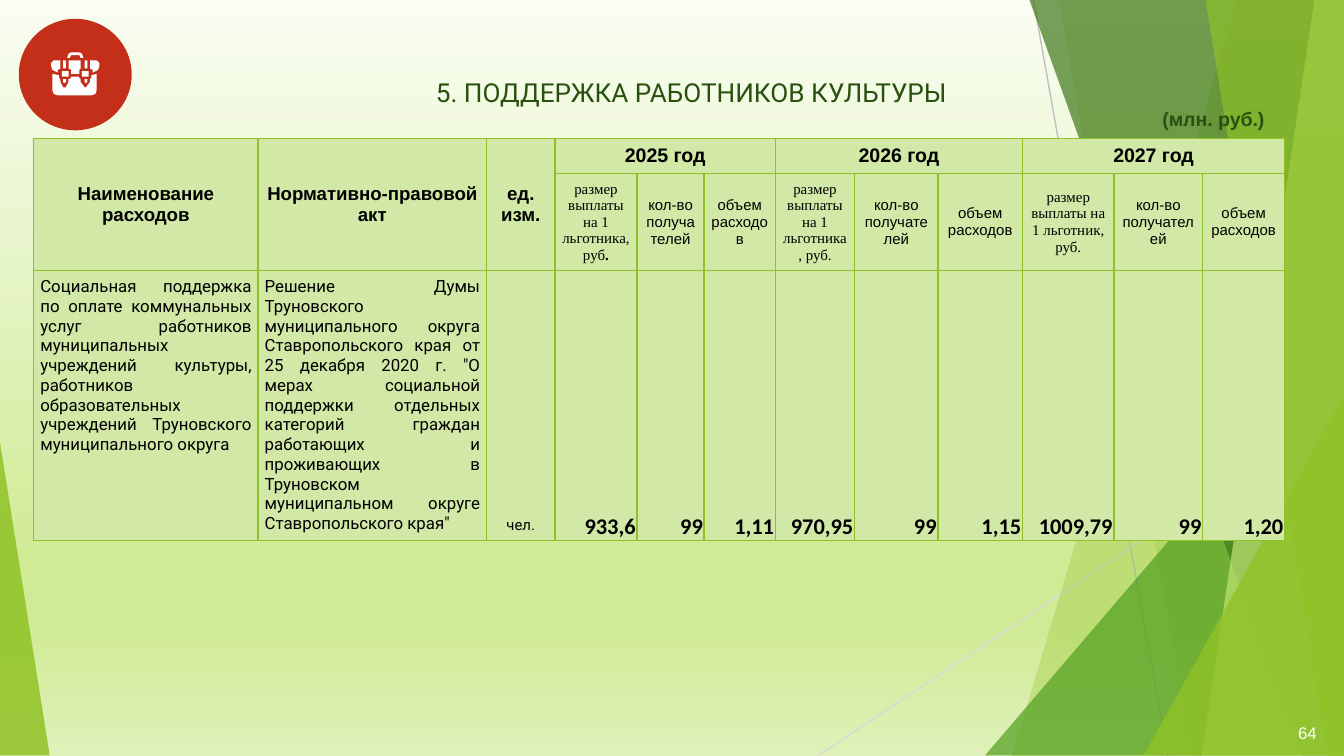
"""Build the slide on support for culture workers."""
from lxml import etree
from pptx import Presentation
from pptx.dml.color import RGBColor
from pptx.enum.shapes import MSO_CONNECTOR, MSO_SHAPE
from pptx.enum.text import MSO_ANCHOR, PP_ALIGN
from pptx.oxml.ns import qn
from pptx.util import Inches, Pt

LINE = MSO_CONNECTOR.STRAIGHT
OVAL, WEDGE = MSO_SHAPE.OVAL, MSO_SHAPE.ISOSCELES_TRIANGLE
TOP, MID, LOW = MSO_ANCHOR.TOP, MSO_ANCHOR.MIDDLE, MSO_ANCHOR.BOTTOM
LEFT, MIDDLE, RIGHT, BOTH = PP_ALIGN.LEFT, PP_ALIGN.CENTER, PP_ALIGN.RIGHT, PP_ALIGN.JUSTIFY
LIME = RGBColor(0x90, 0xC2, 0x26)
LEAF = RGBColor(0x54, 0xA0, 0x21)
MOSS = RGBColor(0x3F, 0x78, 0x19)
PALE = RGBColor(0xC0, 0xE4, 0x74)
DARK = RGBColor(0x2A, 0x50, 0x10)
RED = RGBColor(0xC4, 0x2F, 0x1A)
WHITE = RGBColor(0xFF, 0xFF, 0xFF)
BLACK = RGBColor(0, 0, 0)
GRAY = RGBColor(0xBF, 0xBF, 0xBF)
MIST = RGBColor(0xD9, 0xD9, 0xD9)
CREAM = RGBColor(0xFA, 0xFD, 0xF3)
SOFT = RGBColor(0xD0, 0xEB, 0x96)
FADE = RGBColor(0xDF, 0xF1, 0xB9)
SAGE = RGBColor(0xD2, 0xE8, 0xA7)


def write(frame, text, face, size, color=BLACK, bold=False, align=MIDDLE):
    para = frame.paragraphs[0]
    para.text = text
    para.alignment = align
    para.font.name = face
    para.font.size = Pt(size)
    para.font.bold = bold
    para.font.color.rgb = color


deck = Presentation()
deck.slide_width, deck.slide_height = Inches(10), Inches(10) * 9 // 16
wide, tall = deck.slide_width, deck.slide_height
slide = deck.slides.add_slide(deck.slide_layouts[6])
shapes = slide.shapes

slide.background.fill.solid()
solid = slide.element.find(".//" + qn("a:solidFill"))
grad = etree.Element(qn("a:gradFill"), rotWithShape="1")
stops = etree.SubElement(grad, qn("a:gsLst"))
for spot, color in ((0, CREAM), (74, SOFT), (83, SOFT), (100, FADE)):
    stop = etree.SubElement(stops, qn("a:gs"), pos=str(spot * 1000))
    etree.SubElement(stop, qn("a:srgbClr"), val=str(color))
etree.SubElement(grad, qn("a:lin"), ang="5400000", scaled="0")
solid.getparent().replace(solid, grad)

for color, *ends in ((GRAY, 7.69, 0, 8.69, 5.63), (MIST, 10, 3.02, 6.09, 5.62)):
    line = shapes.add_connector(LINE, *map(Inches, ends))
    line.line.color.rgb = color
    line.line.width = Pt(0.75)
    etree.SubElement(line.element.spPr, qn("a:effectLst"))

facets = (
    (LIME, 30, (9.21, 7.53)),
    (LIME, 20, (7.88, 8.87)),
    (LEAF, 72, (7.33, 2.5, 2.67, 3.12, 1)),
    (MOSS, 70, (7.66, 9.68)),
    (PALE, 70, (9.78, 8.94)),
    (LIME, 65, (8.97, 9.88)),
    (LIME, 80, (8.51, 2.94, 1.49, 2.68, 1)),
    (LIME, 85, (0, 3.29, 0.37, 2.33, 0)),
)
for color, alpha, form in facets:
    if len(form) == 2:
        high, low = map(Inches, form)
        pen = shapes.build_freeform(high, 0, scale=1.0)
        pen.add_line_segments([(wide, 0), (wide, tall), (low, tall)])
        facet = pen.convert_to_shape()
    else:
        facet = shapes.add_shape(WEDGE, *map(Inches, form[:4]))
        facet.adjustments[0] = form[4]
    facet.shadow.inherit = False
    facet.fill.solid()
    facet.fill.fore_color.rgb = color
    facet.line.fill.background()
    tint = facet.element.spPr.find(".//" + qn("a:srgbClr"))
    etree.SubElement(tint, qn("a:alpha"), val=str(alpha * 1000))

widths = (1.67, 1.7, 0.51, 0.61, 0.5, 0.53, 0.59, 0.62, 0.63, 0.68, 0.66, 0.61)
heights = (0.26, 0.72, 2.01)
box = map(Inches, (0.25, 1.03, sum(widths), sum(heights)))
table = shapes.add_table(len(heights), len(widths), *box).table
table.first_row = table.horz_banding = False
for col, width in zip(table.columns, widths):
    col.width = Inches(width)
for row, height in zip(table.rows, heights):
    row.height = Inches(height)

heads = ("Наименование расходов", "Нормативно-правовой акт", "ед. изм.")
years = ("2025 год", "2026 год", "2027 год")
pays = (
    "размер выплаты на 1 льготника, руб",
    "размер выплаты на 1 льготника, руб.",
    "размер выплаты на 1 льготник, руб.",
)
sums = (("933,6", "99", "1,11"), ("970,95", "99", "1,15"), ("1009,79", "99", "1,20"))
notes = (
    "Социальная поддержка по оплате коммунальных услуг работников муниципальных "
    "учреждений культуры, работников образовательных учреждений Труновского "
    "муниципального округа",
    "Решение Думы Труновского муниципального округа Ставропольского края от "
    "25 декабря 2020 г. \"О мерах социальной поддержки отдельных категорий граждан "
    "работающих и проживающих в Труновском муниципальном округе Ставропольского края\"",
)

items = [(0, i, head, "Arial", 10, True, MIDDLE, MID) for i, head in enumerate(heads)]
items += [(2, i, note, "Roboto", 9, False, BOTH, TOP) for i, note in enumerate(notes)]
items.append((2, 2, "чел.", "Roboto", 8, False, MIDDLE, LOW))
for i, (year, pay, trio) in enumerate(zip(years, pays, sums)):
    first = 3 + 3 * i
    items.append((0, first, year, "Arial", 10.5, True, MIDDLE, LOW))
    for j, label in enumerate((pay, "кол-во получателей", "объем расходов")):
        face = "Arial" if j else "Times New Roman"
        items.append((1, first + j, label, face, 8, False, MIDDLE, MID))
        items.append((2, first + j, trio[j], "Calibri", 12, True, RIGHT, LOW))
    table.cell(0, first).merge(table.cell(0, first + 2))
for i in range(len(heads)):
    table.cell(0, i).merge(table.cell(1, i))

for cell in table.iter_cells():
    props = cell._tc.get_or_add_tcPr()
    for side in ("a:lnL", "a:lnR", "a:lnT", "a:lnB"):
        edge = etree.SubElement(props, qn(side), w=str(Pt(1)))
        paint = etree.SubElement(edge, qn("a:solidFill"))
        etree.SubElement(paint, qn("a:srgbClr"), val=str(LIME))
    cell.fill.solid()
    cell.fill.fore_color.rgb = SAGE

for row, col, text, face, size, bold, align, anchor in items:
    cell = table.cell(row, col)
    tight = align == RIGHT
    cell.margin_left = cell.margin_right = cell.margin_top = Inches(0.01 if tight else 0.05)
    cell.margin_bottom = Inches(0 if tight else 0.05)
    cell.vertical_anchor = anchor
    write(cell.text_frame, text, face, size, bold=bold, align=align)
dot = table.cell(1, 3).text_frame.paragraphs[0].add_run()
dot.text = "."
dot.font.bold = True

badge = shapes.add_shape(OVAL, Inches(0.14), Inches(0.14), Inches(0.84), Inches(0.83))
body = [
    (0.39, 0.55), (0.39, 0.67), (0.4, 0.7), (0.43, 0.71), (0.68, 0.71), (0.71, 0.7),
    (0.72, 0.67), (0.72, 0.55), (0.68, 0.56), (0.68, 0.58), (0.67, 0.59), (0.67, 0.61),
    (0.64, 0.65), (0.63, 0.65), (0.6, 0.61), (0.6, 0.59), (0.59, 0.58), (0.59, 0.57),
    (0.53, 0.57), (0.53, 0.58), (0.51, 0.59), (0.51, 0.61), (0.49, 0.65), (0.47, 0.65),
    (0.45, 0.61), (0.45, 0.59), (0.44, 0.58), (0.44, 0.56),
]
flap = [(0.51, 0.45), (0.51, 0.51), (0.53, 0.52), (0.53, 0.55), (0.59, 0.55),
        (0.59, 0.52), (0.6, 0.51), (0.6, 0.45)]
wing = [(0.4, 0.45), (0.38, 0.47), (0.38, 0.49), (0.39, 0.52), (0.41, 0.53),
        (0.43, 0.54), (0.43, 0.52), (0.45, 0.51), (0.45, 0.45)]
grip = [(0.53, 0.39), (0.51, 0.4), (0.5, 0.43), (0.52, 0.43), (0.53, 0.41),
        (0.59, 0.41), (0.6, 0.43), (0.62, 0.43), (0.61, 0.4), (0.59, 0.39)]
strap = [
    [(0.47, 0.45), (0.47, 0.51), (0.49, 0.51), (0.49, 0.45)],
    [(0.46, 0.53), (0.46, 0.57), (0.51, 0.57), (0.51, 0.53)],
    [(0.47, 0.59), (0.47, 0.61), (0.48, 0.62), (0.49, 0.61), (0.49, 0.59)],
]
icon = [[body], [flap], [wing], [[(1.12 - x, y) for x, y in wing]], strap,
        [[(1.12 - x, y) for x, y in ring] for ring in strap], [grip]]
marks = [(badge, RED)]
for rings in icon:
    pen = None
    for ring in rings:
        start, *rest = [(Inches(x), Inches(y)) for x, y in ring]
        if pen:
            pen.move_to(*start)
        else:
            pen = shapes.build_freeform(*start, scale=1.0)
        pen.add_line_segments(rest)
    marks.append((pen.convert_to_shape(), WHITE))
for mark, color in marks:
    mark.shadow.inherit = False
    mark.fill.solid()
    mark.fill.fore_color.rgb = color
    mark.line.fill.background()

labels = (
    ((8.55, 0.75, 1.01, 0.29), "(млн. руб.)", "Arial", 10.5, DARK, True, LEFT),
    ((9.56, 5.33, 0.38, 0.24), "64", "Arial", 9, WHITE, False, LEFT),
    ((1.2, 0.52, 7.89, 0.34), "5. ПОДДЕРЖКА РАБОТНИКОВ КУЛЬТУРЫ", "Roboto", 14, DARK, False, MIDDLE),
)
for box, text, *style in labels:
    frame = shapes.add_textbox(*map(Inches, box)).text_frame
    frame.word_wrap = text[0] != "("
    write(frame, text, *style)

deck.save("out.pptx")
